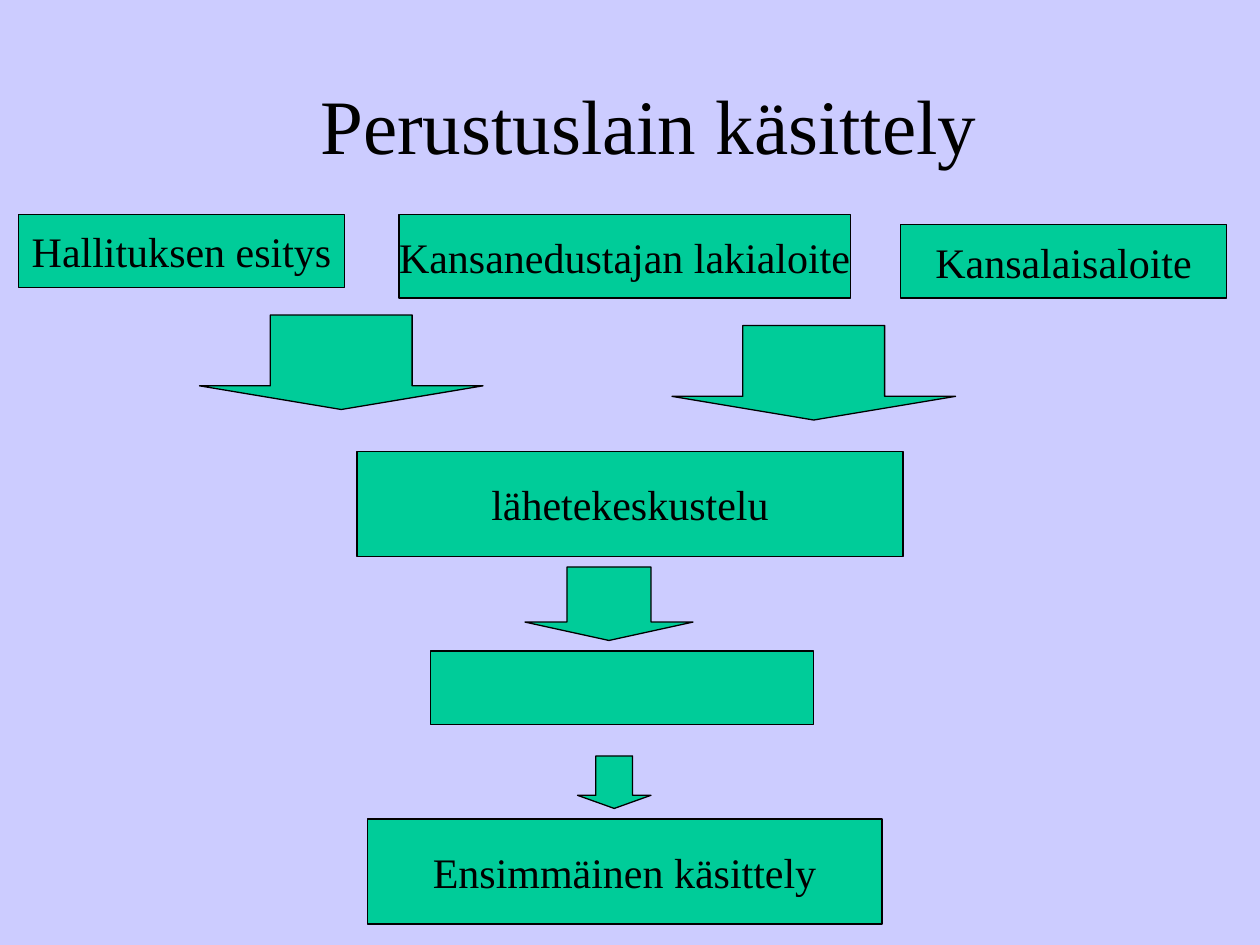
from dataclasses import dataclass

from pptx import Presentation, util as u
from pptx.dml.color import RGBColor
from pptx.enum import shapes, text


@dataclass(frozen=True)
class Theme:
    """Colours, type and line sizes of the slide."""
    background: str = "CCCCFF"
    box: str = "00CC99"
    ink: str = "000000"
    font: str = "Times New Roman"
    title_size: int = 44
    body_size: int = 24
    line_width: float = 0.75


class FlowSlide:
    """Draws a flow chart on a grid of 120 columns and 90 rows."""
    COLUMNS, ROWS = 120, 90

    def __init__(self, deck, theme):
        """Adds a title-only slide with the theme's background."""
        self.theme = theme
        self.cell_width = deck.slide_width / self.COLUMNS
        self.cell_height = deck.slide_height / self.ROWS
        self.slide = deck.slides.add_slide(deck.slide_layouts[5])
        self.paint(self.slide.background.fill, theme.background)

    def paint(self, fill, colour):
        """Makes a fill solid in one colour."""
        fill.solid()
        fill.fore_color.rgb = RGBColor.from_string(colour)

    def place(self, column, row, columns, rows):
        """Turns grid cells into left, top, width and height."""
        return (round(column * self.cell_width), round(row * self.cell_height),
                round(columns * self.cell_width), round(rows * self.cell_height))

    def label(self, frame, wording, size, wrap):
        """Sets one centred paragraph in the theme's font."""
        frame.text = wording
        paragraph = frame.paragraphs[0]
        formats = {
            frame: {"word_wrap": wrap, "vertical_anchor": text.MSO_ANCHOR.MIDDLE},
            paragraph: {"alignment": text.PP_ALIGN.CENTER},
            paragraph.runs[0].font: {"name": self.theme.font, "size": u.Pt(size)},
        }
        for target, values in formats.items():
            for name, value in values.items():
                setattr(target, name, value)
        paragraph.runs[0].font.color.rgb = RGBColor.from_string(self.theme.ink)

    def title(self, wording, *cells):
        """Moves and fills the title placeholder."""
        heading = self.slide.shapes.title
        for name, value in zip(("left", "top", "width", "height"), self.place(*cells)):
            setattr(heading, name, value)
        self.label(heading.text_frame, wording, self.theme.title_size, True)

    def block(self, kind, *cells):
        """Adds a filled and outlined preset shape."""
        block = self.slide.shapes.add_shape(kind, *self.place(*cells))
        block.shadow.inherit = False
        self.paint(block.fill, self.theme.box)
        self.paint(block.line.fill, self.theme.ink)
        block.line.width = u.Pt(self.theme.line_width)
        return block

    def stage(self, wording, *cells):
        """Adds a box for one stage, labelled if it has wording."""
        stage = self.block(shapes.MSO_SHAPE.RECTANGLE, *cells)
        if wording:
            self.label(stage.text_frame, wording, self.theme.body_size, False)

    def arrow(self, *cells):
        """Adds a wide arrow pointing down to the next stage."""
        arrow = self.block(shapes.MSO_SHAPE.DOWN_ARROW, *cells)
        arrow.adjustments[0], arrow.adjustments[1] = 0.5, 0.25


STAGES = [
    ("Hallituksen esitys", 1.8, 20.4, 31, 7),
    ("Kansanedustajan lakialoite", 38, 20.4, 43, 8),
    ("lähetekeskustelu", 34, 43, 52, 10),
    ("", 41, 62, 36.5, 7),
    ("Ensimmäinen käsittely", 35, 78, 49, 10),
    ("Kansalaisaloite", 85.8, 21.4, 31, 7),
]
ARROWS = [(19, 30, 27, 9), (64, 31, 27, 9), (50, 54, 16, 7), (55, 72, 7, 5)]


def main():
    """Builds and saves the slide."""
    deck = Presentation()
    deck.slide_width, deck.slide_height = u.Inches(10), u.Inches(7.5)
    flow = FlowSlide(deck, Theme())
    flow.title("Perustuslain käsittely", 10.8, 4.3, 102, 15)
    for stage in STAGES:
        flow.stage(*stage)
    for arrow in ARROWS:
        flow.arrow(*arrow)
    deck.save("out.pptx")


if __name__ == "__main__":
    main()
